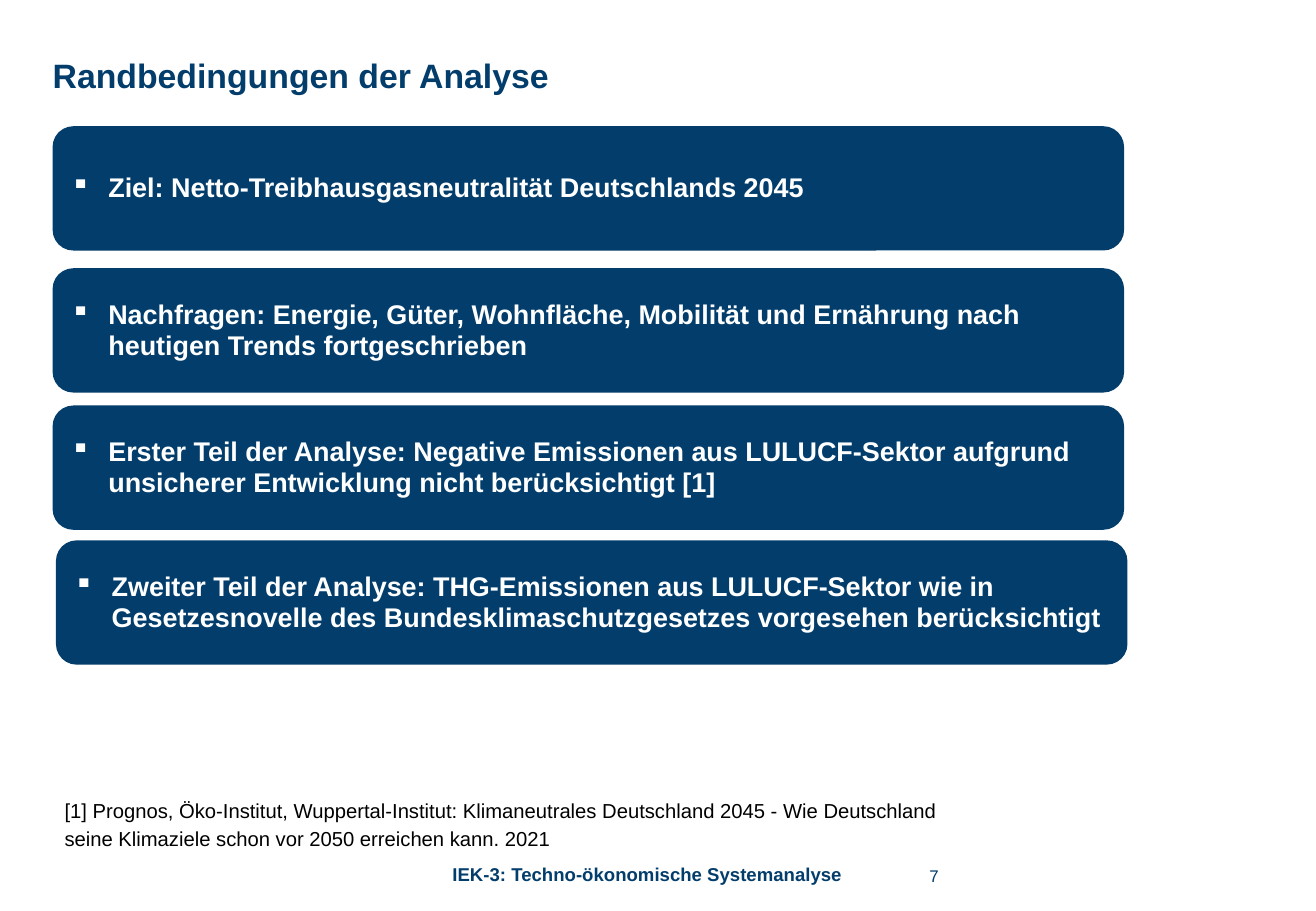
import pptx
import pptx.util
import pptx.dml.color
import pptx.enum.shapes
import pptx.enum.text
import pptx.oxml
import pptx.oxml.ns
import lxml.etree

Cm = pptx.util.Cm
Pt = pptx.util.Pt
ALIGN = pptx.enum.text.PP_ALIGN
ANCHOR = pptx.enum.text.MSO_ANCHOR

NAVY = pptx.dml.color.RGBColor(0x02, 0x3D, 0x6B)
WHITE = pptx.dml.color.RGBColor(0xFF, 0xFF, 0xFF)
BLACK = pptx.dml.color.RGBColor(0x00, 0x00, 0x00)

TITLE_FONT = {"name": "Arial", "size": Pt(20), "bold": True}
CARD_FONT = {"name": "Arial", "size": Pt(16), "bold": True}
NOTE_FONT = {"name": "Arial", "size": Pt(12), "bold": False}
FOOTER_FONT = {"name": "Arial", "size": Pt(11), "bold": True}
NUMBER_FONT = {"name": "Arial", "size": Pt(10), "bold": False}

NO_INSETS = {"margin_left": 0, "margin_top": 0, "margin_right": 0, "margin_bottom": 0}

CARDS = [
    (1.1, 2.64, "Ziel: Netto-Treibhausgasneutralität Deutschlands 2045"),
    (1.1, 5.61, "Nachfragen: Energie, Güter, Wohnfläche, Mobilität und Ernährung "
                "nach heutigen Trends fortgeschrieben"),
    (1.1, 8.48, "Erster Teil der Analyse: Negative Emissionen aus LULUCF-Sektor "
                "aufgrund unsicherer Entwicklung nicht berücksichtigt [1]"),
    (1.17, 11.3, "Zweiter Teil der Analyse: THG-Emissionen aus LULUCF-Sektor wie in "
                 "Gesetzesnovelle des Bundesklimaschutzgesetzes vorgesehen berücksichtigt"),
]
REFERENCE = ("[1] Prognos, Öko-Institut, Wuppertal-Institut: Klimaneutrales Deutschland 2045 "
             "- Wie Deutschland seine Klimaziele schon vor 2050 erreichen kann. 2021")


def set_values(target, values):
    for name, value in values.items():
        setattr(target, name, value)


def write_text(shape, text, font, color, frame_values, paragraph_values):
    frame = shape.text_frame
    set_values(frame, {"word_wrap": True, **frame_values})
    paragraph = frame.paragraphs[0]
    set_values(paragraph, paragraph_values)
    run = paragraph.add_run()
    run.text = text
    set_values(run.font, font)
    run.font.color.rgb = color
    return paragraph


def add_title(slide, text):
    title = slide.shapes.title
    set_values(title, {"left": Cm(1.1), "top": Cm(0.9), "width": Cm(25.32), "height": Cm(1.22)})
    write_text(title, text, TITLE_FONT, NAVY,
               {**NO_INSETS, "vertical_anchor": ANCHOR.MIDDLE},
               {"alignment": ALIGN.LEFT, "line_spacing": 1.14})


def add_bullet(paragraph):
    properties = paragraph._p.get_or_add_pPr()
    properties.set("marL", str(Cm(0.79)))
    properties.set("indent", str(-Cm(0.79)))
    bullet = lxml.etree.SubElement(properties, pptx.oxml.ns.qn("a:buChar"))
    bullet.set("char", "▪")


def add_card(slide, left, top, text):
    card = slide.shapes.add_shape(
        pptx.enum.shapes.MSO_SHAPE.ROUNDED_RECTANGLE, Cm(left), Cm(top), Cm(22.4), Cm(2.6))
    card.shadow.inherit = False
    card.fill.solid()
    card.fill.fore_color.rgb = NAVY
    card.line.fill.background()
    paragraph = write_text(card, text, CARD_FONT, WHITE,
                           {"vertical_anchor": ANCHOR.MIDDLE},
                           {"alignment": ALIGN.LEFT, "line_spacing": 0.95})
    add_bullet(paragraph)


def add_text(slide, box, text, font, color, frame_values, paragraph_values):
    shape = slide.shapes.add_textbox(*[Cm(length) for length in box])
    return write_text(shape, text, font, color, frame_values, paragraph_values)


def make_slide_number(paragraph):
    run = paragraph.runs[0]._r
    field = pptx.oxml.parse_xml(
        '<a:fld %s id="{B6F15528-21DE-4FAA-801E-634DDDAF4B2B}" type="slidenum"/>'
        % pptx.oxml.ns.nsdecls("a"))
    run.addprevious(field)
    for child in list(run):
        field.append(child)
    paragraph._p.remove(run)


def main():
    presentation = pptx.Presentation()
    set_values(presentation, {"slide_width": Cm(27.51), "slide_height": Cm(19.05)})
    presentation.slides._sldIdLst.getparent().set("firstSlideNum", "7")
    slide = presentation.slides.add_slide(presentation.slide_layouts[5])

    add_title(slide, "Randbedingungen der Analyse")
    for left, top, text in CARDS:
        add_card(slide, left, top, text)
    add_text(slide, (1.1, 16.51, 18.87, 1.68), REFERENCE, NOTE_FONT, BLACK, {},
             {"line_spacing": 1.13, "space_after": Pt(6.1)})

    footer_frame = {**NO_INSETS, "vertical_anchor": ANCHOR.BOTTOM}
    add_text(slide, (8.33, 17.91, 10.41, 0.61), "IEK-3: Techno-ökonomische Systemanalyse",
             FOOTER_FONT, NAVY, footer_frame, {"alignment": ALIGN.CENTER})
    number = add_text(slide, (19.43, 17.88, 1.19, 0.64), "7", NUMBER_FONT, NAVY,
                      footer_frame, {"alignment": ALIGN.LEFT})
    make_slide_number(number)
    presentation.save("out.pptx")


if __name__ == "__main__":
    main()
